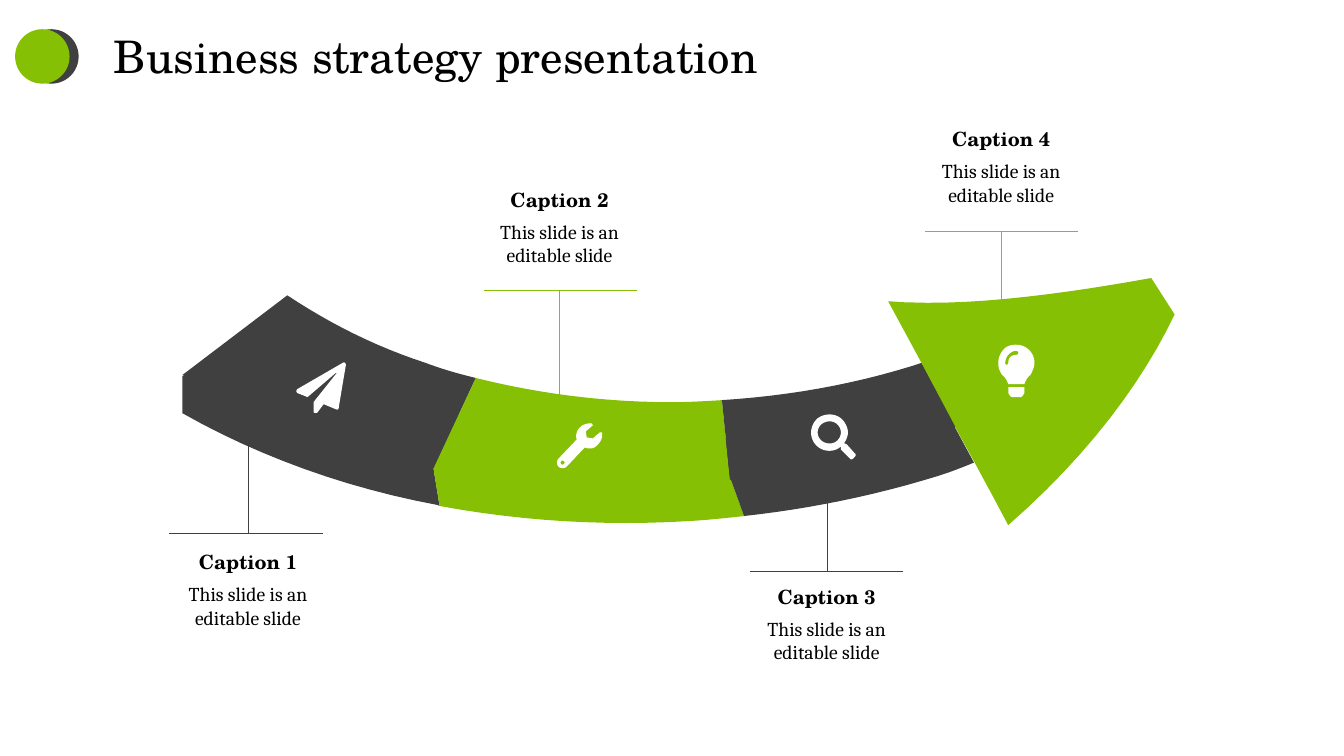
from dataclasses import dataclass

from lxml import etree
from pptx import Presentation
from pptx.dml.color import RGBColor
from pptx.enum.shapes import MSO_CONNECTOR, MSO_SHAPE
from pptx.enum.text import MSO_AUTO_SIZE, PP_ALIGN
from pptx.oxml.ns import qn
from pptx.shapes.autoshape import Shape
from pptx.slide import Slide
from pptx.text.text import TextFrame
from pptx.util import Inches, Pt

GREEN = RGBColor(0x85, 0xC0, 0x04)
DARK = RGBColor(0x40, 0x40, 0x40)
WHITE = RGBColor(0xFF, 0xFF, 0xFF)
BLACK = RGBColor(0x00, 0x00, 0x00)
OVAL = MSO_SHAPE.OVAL
STRAIGHT = MSO_CONNECTOR.STRAIGHT
LEFT, CENTER = PP_ALIGN.LEFT, PP_ALIGN.CENTER
FIT_SHAPE = MSO_AUTO_SIZE.SHAPE_TO_FIT_TEXT
HEADING_FONT, BODY_FONT = "TeX Gyre Schola", "Cambria"

CURVE_STEPS = 12
STEM_LENGTH = 1.69
RAIL_WIDTH = 1.52
CAPTION_WIDTH, CAPTION_HEIGHT = 1.61, 0.79

Contour = list[tuple[float, ...]]


@dataclass(frozen=True)
class Outline:
    color: RGBColor
    contours: list[Contour]


@dataclass(frozen=True)
class Caption:
    heading: str
    stem_x: float
    stem_top: float
    rail_left: float
    rail_y: float
    text_top: float
    color: RGBColor


# A pair is a straight step; six numbers are a cubic curve.
RIBBON_BACK = [
    Outline(DARK, [[
        (4.2, 4.03), (4.36, 5.02), (4.34, 5.01), (3.43, 4.84, 2.57, 4.53, 1.81, 4.1),
        (1.81, 3.73), (1.81, 3.73, 3.77, 3.8, 4.28, 3.97)]]),
    Outline(GREEN, [[
        (7.38, 5.12), (7.19, 5.14, 7.01, 5.16, 6.83, 5.17), (6, 5.22, 5.17, 5.17, 4.36, 5.02),
        (4.2, 4.03), (4.84, 4.19, 6.1, 4.35, 6.78, 4.35), (6.95, 4.35, 6.94, 4.41, 7.12, 4.4)]]),
    Outline(DARK, [[
        (9.66, 4.59), (9.54, 4.64, 9.41, 4.69, 9.28, 4.73), (8.66, 4.92, 8.02, 5.05, 7.38, 5.12),
        (7.12, 4.4), (7.77, 4.36, 8.61, 4.18, 9.23, 3.99), (9.32, 3.96)]]),
    Outline(GREEN, [[
        (11.65, 3.12), (11.33, 3.79, 10.8, 4.51, 10, 5.21), (9.67, 4.59), (9.32, 3.96),
        (9.22, 3.78), (9.14, 3.64, 9.14, 3.54, 9.06, 3.39), (9.13, 3.4, 9.12, 3.36, 9.2, 3.36),
        (9.89, 3.39, 10.65, 2.89, 11.42, 2.76)]]),
]
RIBBON_FRONT = [
    Outline(DARK, [[
        (4.72, 3.75), (4.3, 4.65), (4.28, 4.64), (3.4, 4.47, 2.55, 4.16, 1.81, 3.72),
        (2.85, 2.93), (3.27, 3.21, 3.73, 3.44, 4.22, 3.6), (4.38, 3.66, 4.55, 3.71, 4.72, 3.75)]]),
    Outline(GREEN, [[
        (7.24, 4.76), (7.07, 4.78, 6.89, 4.8, 6.71, 4.81), (5.9, 4.85, 5.09, 4.8, 4.3, 4.65),
        (4.72, 3.75), (5.36, 3.91, 6.01, 3.99, 6.66, 3.99), (6.83, 3.99, 6.99, 3.98, 7.16, 3.97)]]),
    Outline(DARK, [[
        (9.48, 4.23), (9.35, 4.28, 9.22, 4.33, 9.1, 4.37), (8.49, 4.56, 7.87, 4.69, 7.24, 4.76),
        (7.16, 3.97), (7.8, 3.93, 8.44, 3.82, 9.05, 3.63), (9.14, 3.6)]]),
    Outline(GREEN, [[
        (11.41, 2.76), (11.1, 3.43, 10.59, 4.15, 9.81, 4.85), (9.48, 4.24), (9.14, 3.6),
        (8.81, 2.99), (8.87, 2.99, 8.94, 3, 9.01, 3), (9.73, 3.03, 10.63, 2.9, 11.41, 2.76)]]),
]
WRENCH = Outline(WHITE, [
    [(5.93, 4.41), (5.9, 4.45, 5.85, 4.46, 5.8, 4.44), (5.62, 4.63),
     (5.6, 4.65, 5.56, 4.65, 5.54, 4.63), (5.52, 4.61, 5.52, 4.57, 5.54, 4.55), (5.72, 4.36),
     (5.7, 4.3, 5.74, 4.23, 5.8, 4.21), (5.83, 4.2, 5.85, 4.2, 5.87, 4.2), (5.88, 4.22),
     (5.81, 4.28), (5.82, 4.34), (5.88, 4.35), (5.95, 4.29), (5.97, 4.29),
     (5.98, 4.34, 5.96, 4.38, 5.93, 4.41)],
    [(5.6, 4.59), (5.6, 4.58, 5.59, 4.57, 5.58, 4.57), (5.57, 4.57, 5.56, 4.58, 5.56, 4.59),
     (5.56, 4.6, 5.57, 4.61, 5.58, 4.61), (5.59, 4.61, 5.6, 4.6, 5.6, 4.59)],
])
BULB = Outline(WHITE, [
    [(10.08, 3.42), (10.18, 3.42, 10.26, 3.5, 10.26, 3.6), (10.26, 3.64, 10.24, 3.68, 10.22, 3.72),
     (10.19, 3.74, 10.17, 3.78, 10.16, 3.81), (10, 3.81), (9.99, 3.78, 9.97, 3.74, 9.94, 3.72),
     (9.88, 3.64, 9.89, 3.53, 9.96, 3.46), (9.99, 3.43, 10.03, 3.42, 10.08, 3.42)],
    [(10.1, 3.5), (10.1, 3.49, 10.09, 3.48, 10.08, 3.48), (10.02, 3.48, 9.97, 3.54, 9.97, 3.6),
     (9.97, 3.61, 9.97, 3.61, 9.98, 3.62), (9.99, 3.62, 10, 3.61, 10, 3.6),
     (10, 3.55, 10.03, 3.52, 10.08, 3.52), (10.09, 3.52, 10.1, 3.51, 10.1, 3.5)],
    [(10, 3.84), (10.16, 3.84), (10.16, 3.9), (10.14, 3.93), (10.13, 3.94, 10.12, 3.94, 10.11, 3.94),
     (10.05, 3.94), (10.04, 3.94, 10.03, 3.94, 10.02, 3.93), (10, 3.9)],
])
PAPER_PLANE = Outline(WHITE, [[
    (3.43, 3.62), (3.36, 4.04), (3.36, 4.06, 3.35, 4.07, 3.33, 4.06), (3.21, 4.01), (3.15, 4.09),
    (3.14, 4.1, 3.12, 4.1, 3.11, 4.09), (3.11, 4.07), (3.11, 3.99), (3.34, 3.7), (3.33, 3.7),
    (3.05, 3.94), (2.95, 3.9), (2.94, 3.89, 2.93, 3.88, 2.95, 3.86), (3.4, 3.6),
    (3.41, 3.59, 3.43, 3.6, 3.43, 3.62)]])
MAGNIFIER = Outline(WHITE, [
    [(8.48, 4.53), (8.46, 4.55), (8.45, 4.56, 8.44, 4.56, 8.43, 4.55), (8.34, 4.46), (8.34, 4.43),
     (8.26, 4.5, 8.14, 4.48, 8.08, 4.4), (8.02, 4.32, 8.04, 4.21, 8.11, 4.15),
     (8.19, 4.09, 8.31, 4.1, 8.37, 4.18), (8.39, 4.21, 8.41, 4.25, 8.41, 4.29),
     (8.41, 4.33, 8.39, 4.37, 8.37, 4.4), (8.38, 4.4), (8.4, 4.41), (8.48, 4.5),
     (8.49, 4.5, 8.49, 4.52, 8.48, 4.53)],
    [(8.34, 4.29), (8.34, 4.23, 8.29, 4.18, 8.23, 4.18), (8.16, 4.18, 8.11, 4.23, 8.11, 4.29),
     (8.11, 4.35, 8.16, 4.4, 8.23, 4.4), (8.29, 4.4, 8.34, 4.35, 8.34, 4.29)],
])
CAPTIONS = [
    Caption("Caption 1", 2.46, 3.6, 1.68, 5.29, 5.46, DARK),
    Caption("Caption 2", 5.55, 2.88, 4.8, 2.88, 1.86, GREEN),
    Caption("Caption 3", 8.2, 3.98, 7.44, 5.67, 5.8, DARK),
    Caption("Caption 4", 9.93, 2.29, 9.17, 2.29, 1.26, GREEN),
]


def paint(shape: Shape, color: RGBColor) -> None:
    shape.shadow.inherit = False
    shape.fill.solid()
    shape.fill.fore_color.rgb = color
    shape.line.fill.background()


def flatten(contour: Contour) -> list[tuple[int, int]]:
    points = [contour[0]]
    for step in contour[1:]:
        if len(step) == 2:
            points.append(step)
            continue
        nodes = [points[-1], step[:2], step[2:4], step[4:]]
        for index in range(1, CURVE_STEPS + 1):
            t = index / CURVE_STEPS
            weights = ((1 - t) ** 3, 3 * t * (1 - t) ** 2, 3 * t**2 * (1 - t), t**3)
            points.append(tuple(sum(w * n[axis] for w, n in zip(weights, nodes)) for axis in (0, 1)))
    return [(Inches(x), Inches(y)) for x, y in points]


def draw_outline(slide: Slide, outline: Outline) -> None:
    first, *others = [flatten(contour) for contour in outline.contours]
    builder = slide.shapes.build_freeform(*first[0])
    builder.add_line_segments(first[1:], close=True)
    for points in others:
        builder.move_to(*points[0])
        builder.add_line_segments(points[1:], close=True)
    paint(builder.convert_to_shape(), outline.color)


def draw_line(slide: Slide, x1: float, y1: float, x2: float, y2: float, color: RGBColor) -> None:
    line = slide.shapes.add_connector(STRAIGHT, Inches(x1), Inches(y1), Inches(x2), Inches(y2))
    line.line.color.rgb = color
    line.line.width = Pt(0.14)
    etree.SubElement(line._element.spPr, qn("a:effectLst"))


def write_text(frame: TextFrame, text: str, *, size: float, font: str, bold: bool = False,
               align: PP_ALIGN = LEFT, space_before: float = 0) -> None:
    paragraph = frame.add_paragraph() if frame.text else frame.paragraphs[0]
    paragraph.alignment = align
    paragraph.space_before = Pt(space_before)
    run = paragraph.add_run()
    run.text = text
    run.font.size, run.font.name, run.font.bold = Pt(size), font, bold
    run.font.color.rgb = BLACK


def add_frame(slide: Slide, left: float, top: float, width: float, height: float) -> TextFrame:
    frame = slide.shapes.add_textbox(Inches(left), Inches(top), Inches(width), Inches(height)).text_frame
    frame.word_wrap = True
    frame.auto_size = FIT_SHAPE
    return frame


def draw_caption(slide: Slide, caption: Caption) -> None:
    x, rail_y = caption.stem_x, caption.rail_y
    draw_line(slide, x, caption.stem_top, x, caption.stem_top + STEM_LENGTH, caption.color)
    draw_line(slide, caption.rail_left, rail_y, caption.rail_left + RAIL_WIDTH, rail_y, caption.color)
    frame = add_frame(slide, x - CAPTION_WIDTH / 2, caption.text_top, CAPTION_WIDTH, CAPTION_HEIGHT)
    frame.margin_left = frame.margin_right = frame.margin_top = frame.margin_bottom = 0
    write_text(frame, caption.heading, size=14, font=HEADING_FONT, bold=True, align=CENTER, space_before=6)
    write_text(frame, "This slide is an editable slide", size=14, font=BODY_FONT, align=CENTER, space_before=6)


def main() -> None:
    deck = Presentation()
    deck.slide_width, deck.slide_height = Inches(13.33), Inches(7.5)
    slide = deck.slides.add_slide(deck.slide_layouts[6])
    for left, color in ((0.24, DARK), (0.15, GREEN)):
        paint(slide.shapes.add_shape(OVAL, Inches(left), Inches(0.29), Inches(0.54), Inches(0.54)), color)
    write_text(add_frame(slide, 1.03, 0.24, 11.38, 0.64), "Business strategy presentation",
               size=32, font=HEADING_FONT)
    for outline in RIBBON_BACK + RIBBON_FRONT:
        draw_outline(slide, outline)
    for caption in CAPTIONS:
        draw_caption(slide, caption)
    for icon in (PAPER_PLANE, WRENCH, MAGNIFIER, BULB):
        draw_outline(slide, icon)
    deck.save("out.pptx")


if __name__ == "__main__":
    main()
